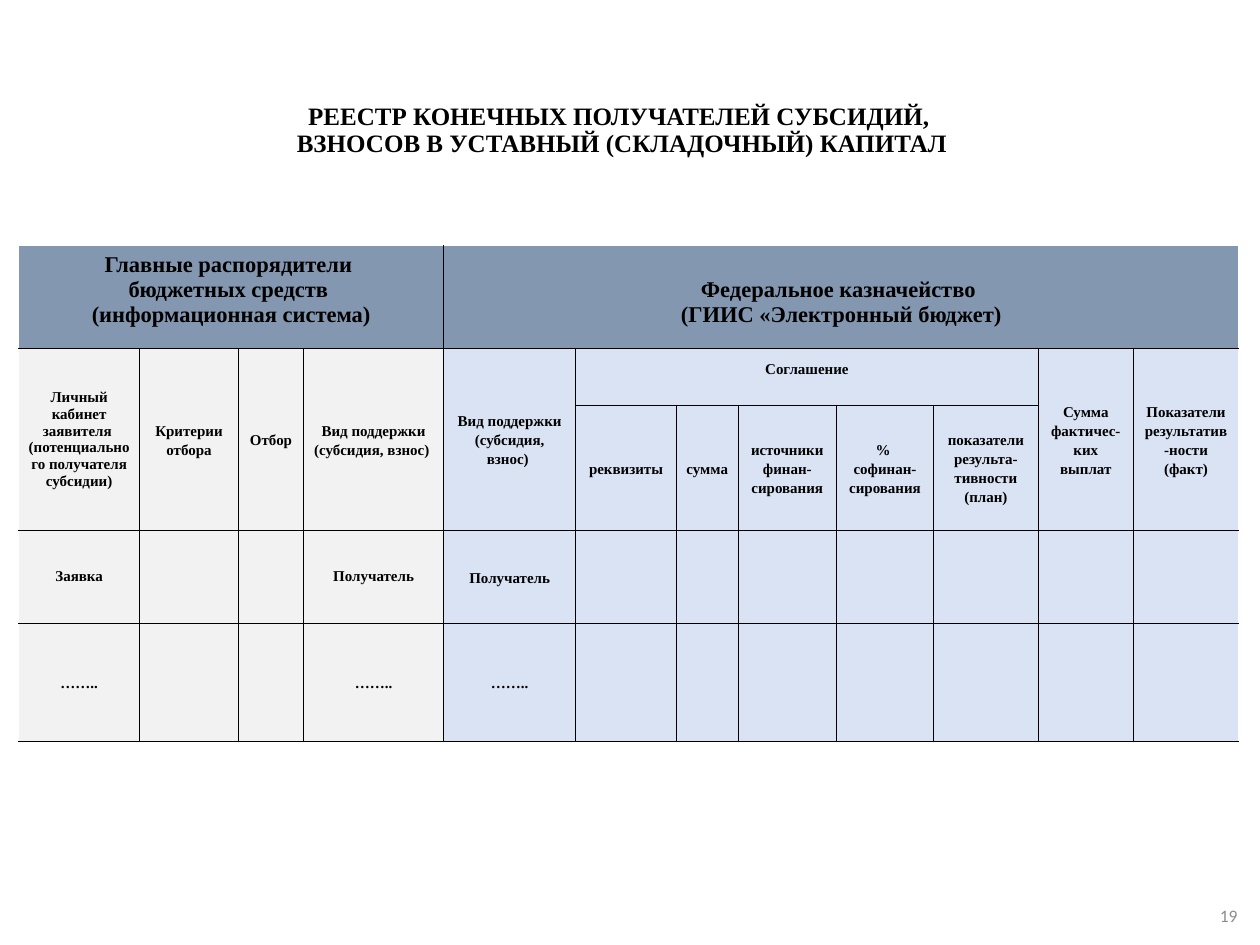
from dataclasses import dataclass

from lxml import etree
from pptx import Presentation
from pptx.dml.color import RGBColor
from pptx.enum.text import MSO_ANCHOR, MSO_AUTO_SIZE, PP_ALIGN
from pptx.oxml.ns import qn
from pptx.util import Cm, Pt

TOP, MIDDLE = MSO_ANCHOR.TOP, MSO_ANCHOR.MIDDLE
CENTER, RIGHT = PP_ALIGN.CENTER, PP_ALIGN.RIGHT
NO_AUTOFIT = MSO_AUTO_SIZE.NONE

SERIF, SANS = "Times New Roman", "Calibri"
BLACK, WHITE, GRAY = "000000", "FFFFFF", "8C8C8C"
HEADER_FILL, MANAGER_FILL, TREASURY_FILL = "8497B0", "F2F2F2", "DAE3F3"

COLUMN_WIDTHS = [3.41, 2.79, 1.84, 3.95, 3.73, 2.84, 1.74, 2.78, 2.74, 2.95, 2.69, 2.97]
ROW_HEIGHTS = [2.9, 1.6, 3.53, 2.63, 3.33]
MANAGER_COLUMNS = 4  # the columns after these belong to the treasury
PADDING_X, PADDING_Y = 0.26, 0.18


@dataclass
class Entry:
    row: int
    column: int
    lines: list[str]
    rows: int = 1
    columns: int = 1
    size: float = 12
    spacing: float = 1.15
    anchor: MSO_ANCHOR = MIDDLE
    extra_top: float = 0
    extra_bottom: float = 0


ENTRIES = [
    # Owners of the data
    Entry(0, 0, ["Главные распорядители ", "бюджетных средств ", "(информационная система)"],
          columns=4, size=18, spacing=1, anchor=TOP),
    Entry(0, 4, ["Федеральное казначейство ", "(ГИИС «Электронный бюджет)"],
          columns=8, size=18, spacing=1, anchor=TOP, extra_top=0.7),
    # Column headings
    Entry(1, 0, ["Личный кабинет", "заявителя ", "(потенциального получателя субсидии)"],
          rows=2, spacing=1),
    Entry(1, 1, ["Критерии отбора"], rows=2),
    Entry(1, 2, ["Отбор"], rows=2),
    Entry(1, 3, ["Вид поддержки (субсидия, взнос) "], rows=2),
    Entry(1, 4, ["Вид поддержки (субсидия, взнос) "], rows=2),
    Entry(1, 5, ["Соглашение"], columns=5, extra_bottom=0.5),
    Entry(1, 10, ["Сумма фактичес- ких выплат"], rows=2),
    Entry(1, 11, ["Показатели результатив-ности", "(факт)"], rows=2),
    # Parts of the agreement
    Entry(2, 5, ["реквизиты"]),
    Entry(2, 6, ["сумма "]),
    Entry(2, 7, ["источники финан-", "сирования"]),
    Entry(2, 8, ["% ", "софинан-сирования"]),
    Entry(2, 9, ["показатели результа-тивности", "(план)"]),
    # Register records
    Entry(3, 0, ["Заявка"], extra_bottom=0.1),
    Entry(3, 3, ["Получатель"], extra_bottom=0.1),
    Entry(3, 4, ["Получатель"]),
    *(Entry(4, column, ["…….."]) for column in (0, 3, 4)),
]


def color(value: str) -> RGBColor:
    return RGBColor.from_string(value)


def write_lines(frame, lines: list[str], size: float, font: str = SERIF, ink: str = BLACK,
                bold: bool = True, align: PP_ALIGN = CENTER, spacing: float = 1) -> None:
    for index, line in enumerate(lines):
        paragraph = frame.paragraphs[0] if index == 0 else frame.add_paragraph()
        paragraph.alignment = align
        paragraph.line_spacing = spacing
        paragraph.space_before = paragraph.space_after = Pt(0)
        run = paragraph.add_run()
        run.text = line
        run.font.name, run.font.size, run.font.bold = font, Pt(size), bold
        run.font.color.rgb = color(ink)


def set_frame(frame, inset_x: float, inset_y: float, extra_bottom: float = 0) -> None:
    frame.word_wrap = True
    frame.auto_size = NO_AUTOFIT
    frame.vertical_anchor = MIDDLE
    frame.margin_left = frame.margin_right = Cm(inset_x)
    frame.margin_top = Cm(inset_y)
    frame.margin_bottom = Cm(inset_y + extra_bottom)


def set_borders(cell, left: str, right: str, top: str, bottom: str) -> None:
    properties = cell._tc.get_or_add_tcPr()
    for side, ink in (("L", left), ("R", right), ("T", top), ("B", bottom)):
        line = etree.SubElement(properties, qn(f"a:ln{side}"), w=str(Pt(1)))
        fill = etree.SubElement(line, qn("a:solidFill"))
        etree.SubElement(fill, qn("a:srgbClr"), val=ink)


def style_cell(cell, row: int, column: int) -> None:
    """Black grid, with white outer edges except at the bottom."""
    last_column = column + cell.span_width - 1 if cell.is_merge_origin else column
    set_borders(
        cell,
        left=WHITE if column == 0 else BLACK,
        right=WHITE if last_column == len(COLUMN_WIDTHS) - 1 else BLACK,
        top=WHITE if row == 0 else BLACK,
        bottom=BLACK,
    )
    body_fill = MANAGER_FILL if column < MANAGER_COLUMNS else TREASURY_FILL
    cell.fill.solid()
    cell.fill.fore_color.rgb = color(HEADER_FILL if row == 0 else body_fill)


def fill_entry(table, entry: Entry) -> None:
    cell = table.cell(entry.row, entry.column)
    if entry.rows > 1 or entry.columns > 1:
        cell.merge(table.cell(entry.row + entry.rows - 1, entry.column + entry.columns - 1))
    cell.vertical_anchor = entry.anchor
    cell.margin_left = cell.margin_right = Cm(PADDING_X)
    cell.margin_top = Cm(PADDING_Y + entry.extra_top)
    cell.margin_bottom = Cm(PADDING_Y + entry.extra_bottom)
    write_lines(cell.text_frame, entry.lines, entry.size, spacing=entry.spacing)


def add_register(slide) -> None:
    table = slide.shapes.add_table(
        len(ROW_HEIGHTS), len(COLUMN_WIDTHS), Cm(0.53), Cm(6.94),
        Cm(sum(COLUMN_WIDTHS)), Cm(sum(ROW_HEIGHTS))).table
    table.first_row = table.horz_banding = False
    for column, width in zip(table.columns, COLUMN_WIDTHS):
        column.width = Cm(width)
    for row, height in zip(table.rows, ROW_HEIGHTS):
        row.height = Cm(height)
    for entry in ENTRIES:
        fill_entry(table, entry)
    for row in range(len(ROW_HEIGHTS)):
        for column in range(len(COLUMN_WIDTHS)):
            style_cell(table.cell(row, column), row, column)


def main() -> None:
    deck = Presentation()
    deck.slide_width, deck.slide_height = Cm(35.56), Cm(26.67)
    slide = deck.slides.add_slide(deck.slide_layouts[5])

    # Title in a rounded frame without fill or line
    title = slide.shapes.title
    title.left, title.top, title.width, title.height = Cm(0.38), Cm(2.84), Cm(34.34), Cm(2.46)
    outline = etree.SubElement(title.element.spPr, qn("a:prstGeom"), prst="roundRect")
    etree.SubElement(outline, qn("a:avLst"))
    set_frame(title.text_frame, 0.25, 0.13, extra_bottom=0.75)
    write_lines(title.text_frame,
                ["РЕЕСТР КОНЕЧНЫХ ПОЛУЧАТЕЛЕЙ СУБСИДИЙ, ",
                 "ВЗНОСОВ В УСТАВНЫЙ (СКЛАДОЧНЫЙ) КАПИТАЛ"], 20, spacing=0.9)

    # Register of recipients
    add_register(slide)

    # Page number
    page_number = slide.shapes.add_textbox(Cm(26.92), Cm(25.12), Cm(8.31), Cm(1.42))
    set_frame(page_number.text_frame, 0.3, 0.15)
    write_lines(page_number.text_frame, ["19"], 14, SANS, GRAY, bold=False, align=RIGHT)

    deck.save("out.pptx")


if __name__ == "__main__":
    main()
